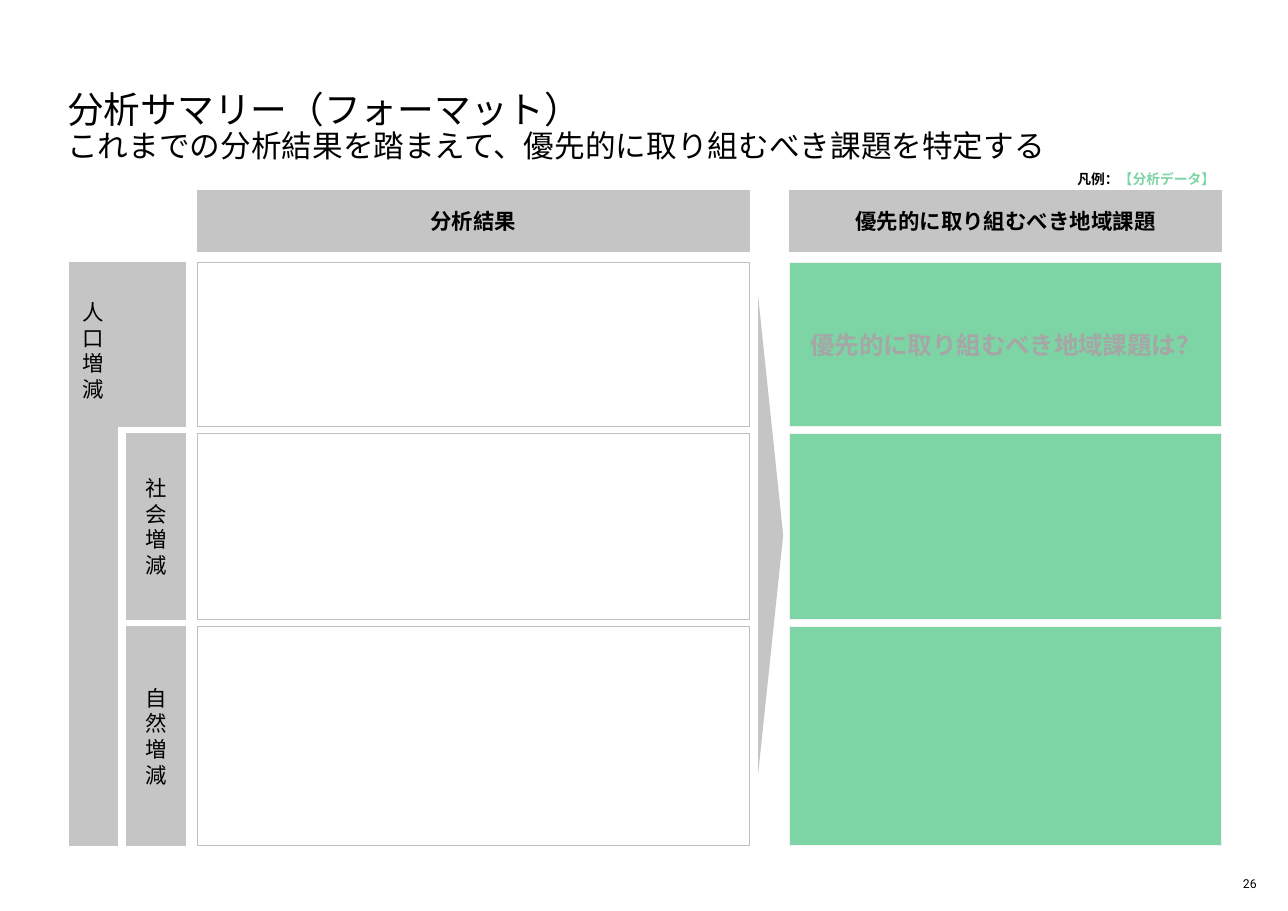
from lxml import etree
from pptx import Presentation
from pptx.dml.color import RGBColor
from pptx.enum.shapes import MSO_SHAPE
from pptx.enum.text import MSO_ANCHOR, PP_ALIGN
from pptx.oxml.ns import qn
from pptx.util import Cm, Pt

BLACK = RGBColor(0x00, 0x00, 0x00)
GRAY = RGBColor(0xC5, 0xC5, 0xC5)
BORDER_GRAY = RGBColor(0xBF, 0xBF, 0xBF)
PROMPT_GRAY = RGBColor(0xA6, 0xA6, 0xA6)
PALE_GRAY = RGBColor(0xF2, 0xF2, 0xF2)
GREEN = RGBColor(0x7D, 0xD4, 0xA5)

RECTANGLE, TRIANGLE = MSO_SHAPE.RECTANGLE, MSO_SHAPE.ISOSCELES_TRIANGLE
LEFT, CENTER, RIGHT = PP_ALIGN.LEFT, PP_ALIGN.CENTER, PP_ALIGN.RIGHT
TOP, MIDDLE, BOTTOM = MSO_ANCHOR.TOP, MSO_ANCHOR.MIDDLE, MSO_ANCHOR.BOTTOM

JAPANESE_FONT = "Noto Sans CJK JP"
NUMBER_FONT = "Roboto"
INSETS = (0.3, 0.2, 0.3, 0.2)

# Grid of the summary, in cm
HEADER_TOP, HEADER_HEIGHT = 4.39, 1.4
ROWS_TOP, ROW_GAP = 6.05, 0.16
ROW_HEIGHTS = (3.78, 4.29, 5.06)
ROW_TOPS = [ROWS_TOP + sum(ROW_HEIGHTS[:i]) + i * ROW_GAP for i in range(3)]
ROWS = list(zip(ROW_TOPS, ROW_HEIGHTS))
ROWS_HEIGHT = sum(ROW_HEIGHTS) + 2 * ROW_GAP


def write(shape, *lines, size=14, color=BLACK, bold=False, font=JAPANESE_FONT,
          align=LEFT, anchor=MIDDLE, insets=INSETS, spacing=None):
    """Fill a shape with lines; a line is a list of (text, overrides) or a string."""
    frame = shape.text_frame
    frame.word_wrap = True
    frame.vertical_anchor = anchor
    (frame.margin_left, frame.margin_top,
     frame.margin_right, frame.margin_bottom) = map(Cm, insets)
    for i, line in enumerate(lines):
        paragraph = frame.add_paragraph() if i else frame.paragraphs[0]
        paragraph.alignment = align
        paragraph.line_spacing = spacing
        for text, changes in [(line, {})] if isinstance(line, str) else line:
            run = paragraph.add_run()
            run.text = text
            run.font.size = Pt(changes.get("size", size))
            run.font.bold = bold
            run.font.color.rgb = changes.get("color", color)
            run.font.name = font
            east_asian = etree.SubElement(run._r.get_or_add_rPr(), qn("a:ea"))
            east_asian.set("typeface", font)


def add_block(slide, left, top, width, height, fill=GRAY, line=GRAY, kind=RECTANGLE):
    block = slide.shapes.add_shape(kind, Cm(left), Cm(top), Cm(width), Cm(height))
    block.shadow.inherit = False
    if fill is None:
        block.fill.background()
    else:
        block.fill.solid()
        block.fill.fore_color.rgb = fill
    if line is None:
        block.line.fill.background()
    else:
        block.line.color.rgb = line
        block.line.width = Pt(0.75)
    return block


def add_text(slide, left, top, width, height, *lines, **text_format):
    box = slide.shapes.add_textbox(Cm(left), Cm(top), Cm(width), Cm(height))
    write(box, *lines, **text_format)


def add_heading(slide, left, top, width, height):
    title = slide.shapes.title
    title.left, title.top, title.width, title.height = map(
        Cm, (left, top, width, height))
    write(title, [("分析サマリー（フォーマット）", {"size": 24})],
          "これまでの分析結果を踏まえて、優先的に取り組むべき課題を特定する",
          size=20, insets=(0, 0, 0, 0), spacing=0.9)


def add_row_labels(slide, left, width):
    """Population bar reaching into the first row, with two sub-labels beside it."""
    label_format = {"align": CENTER, "spacing": Pt(16.8)}
    bar_width, sub_width = 1.12, 1.35
    right = left + width
    add_block(slide, left + bar_width / 2, ROWS_TOP, width - bar_width / 2, ROW_HEIGHTS[0])
    population = add_block(slide, left, ROWS_TOP, bar_width, ROWS_HEIGHT)
    write(population, "人口増減", anchor=TOP, insets=(0.3, 0.84, 0.3, 0.2), **label_format)
    for label, (top, height) in zip(("社会増減", "自然増減"), ROWS[1:]):
        sub_label = add_block(slide, right - sub_width, top, sub_width, height)
        write(sub_label, label, **label_format)


def add_column(slide, left, width, heading, fill, line):
    """Column header with one cell per row; returns the cells."""
    header = add_block(slide, left, HEADER_TOP, width, HEADER_HEIGHT)
    write(header, heading, bold=True, align=CENTER)
    return [add_block(slide, left, top, width, height, fill, line) for top, height in ROWS]


def add_flow_triangle(slide, left, top, width, height):
    """Triangle pointing right that fills the given upright box."""
    triangle = add_block(slide, left + (width - height) / 2, top + (height - width) / 2,
                         height, width, line=None, kind=TRIANGLE)
    triangle.rotation = 90


def build():
    deck = Presentation()
    deck.slide_width, deck.slide_height = Cm(29.7), Cm(21)
    slide = deck.slides.add_slide(deck.slide_layouts[5])

    # Title and summary grid
    add_heading(slide, 1.55, 1.5, 26.6, 2.9)
    add_row_labels(slide, 1.6, 2.67)
    add_column(slide, 4.55, 12.73, "分析結果", None, BORDER_GRAY)
    add_flow_triangle(slide, 17.48, 6.81, 0.58, 11.05)
    issues = add_column(slide, 18.21, 9.96, "優先的に取り組むべき地域課題", GREEN, PALE_GRAY)
    write(issues[0], "優先的に取り組むべき地域課題は？", size=16, color=PROMPT_GRAY,
          bold=True, align=CENTER, insets=(0, 0.2, 0, 0.2))

    # Legend and page number
    add_text(slide, 21.77, 3.81, 6.5, 0.64,
             [("凡例：", {}), ("【分析データ】", {"color": GREEN})],
             size=9, bold=True, align=RIGHT, anchor=TOP, insets=(0.25, 0.13, 0.25, 0.13))
    add_text(slide, 27.89, 20.12, 1.09, 0.41, "26", size=8, font=NUMBER_FONT,
             align=RIGHT, anchor=BOTTOM, insets=(0, 0, 0, 0))
    deck.save("out.pptx")


if __name__ == "__main__":
    build()
